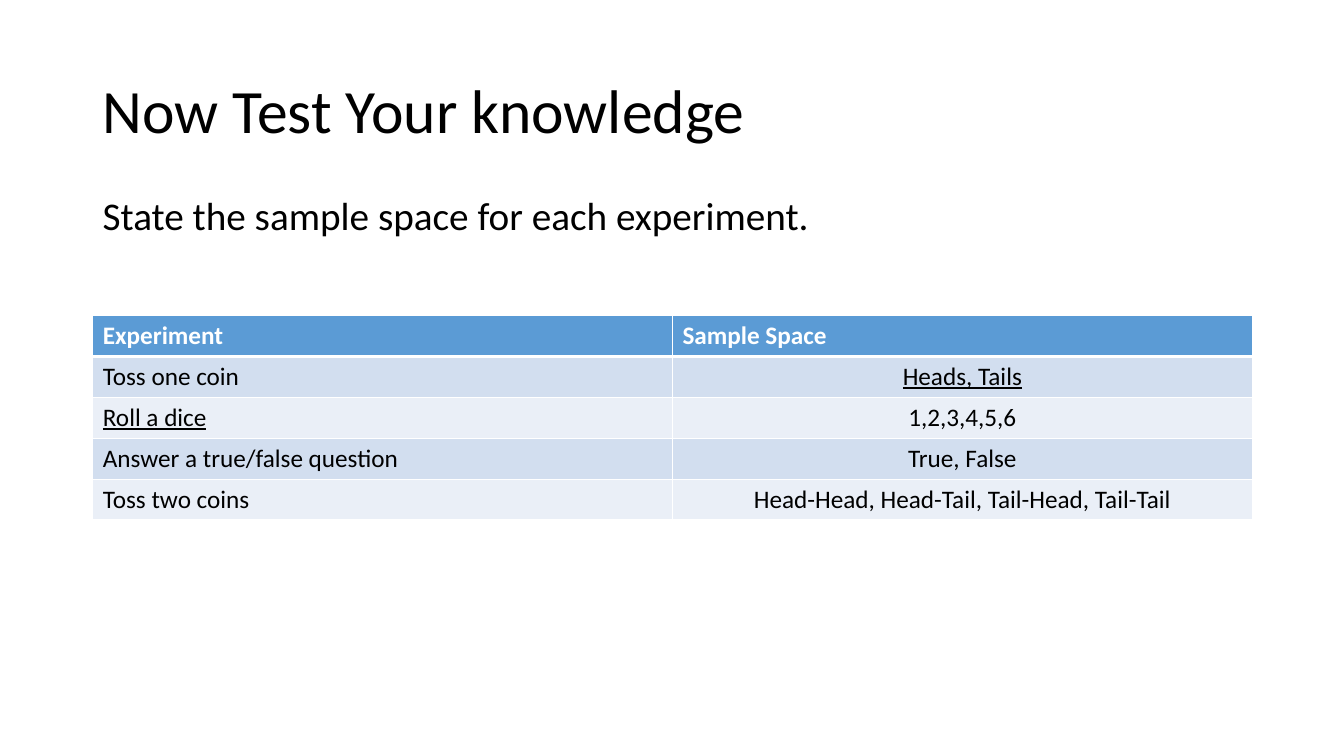
from lxml.etree import SubElement
from pptx import Presentation
from pptx.dml.color import RGBColor
from pptx.enum.text import MSO_ANCHOR as Anchor, PP_ALIGN as Align
from pptx.oxml.ns import qn
from pptx.util import Inches, Pt

WHITE = RGBColor(0xFF, 0xFF, 0xFF)
BLACK = RGBColor(0, 0, 0)
HEADER_BLUE = RGBColor(0x5B, 0x9B, 0xD5)
BANDS = (RGBColor(0xEA, 0xEF, 0xF7), RGBColor(0xD2, 0xDE, 0xEF))

FONT = "Calibri"
SLIDE_W, SLIDE_H = Inches(13.33), Inches(7.5)
MARGIN = Inches(0.92)
CONTENT_W = Inches(11.5)
ROW_H = Inches(0.406)

EXPERIMENTS = [
    ("Experiment", "Sample Space"),
    ("Toss one coin", "Heads, Tails"),
    ("Roll a dice", "1,2,3,4,5,6"),
    ("Answer a true/false question", "True, False"),
    ("Toss two coins", "Head-Head, Head-Tail, Tail-Head, Tail-Tail"),
]
UNDERLINED = {"Heads, Tails", "Roll a dice"}


def add_run(paragraph, text, size, color=BLACK, bold=False, underline=False):
    run = paragraph.add_run()
    run.text = text
    font = run.font
    font.name, font.size, font.bold = FONT, Pt(size), bold
    font.underline = underline
    font.color.rgb = color


def add_text(slide, text, top, height, size, anchor=Anchor.TOP, spacing=1.0):
    frame = slide.shapes.add_textbox(MARGIN, top, CONTENT_W, height).text_frame
    frame.word_wrap = True
    frame.vertical_anchor = anchor
    frame.paragraphs[0].line_spacing = spacing
    add_run(frame.paragraphs[0], text, size)


def set_borders(cell, widths):
    """Draw white cell borders; widths maps a side (L, R, T, B) to points."""
    properties = cell._tc.get_or_add_tcPr()
    for position, (side, width) in enumerate(widths.items()):
        line = properties.makeelement(qn(f"a:ln{side}"), {"w": str(Pt(width))})
        fill = SubElement(line, qn("a:solidFill"))
        SubElement(fill, qn("a:srgbClr"), val=str(WHITE))
        properties.insert(position, line)


def fill_cell(cell, text, row, column):
    header = row == 0
    cell.fill.solid()
    cell.fill.fore_color.rgb = HEADER_BLUE if header else BANDS[row % 2]
    set_borders(cell, {"L": 1, "R": 1,
                       "T": 3 if row == 1 else 1,
                       "B": 3 if header else 1})
    paragraph = cell.text_frame.paragraphs[0]
    paragraph.alignment = Align.CENTER if column and not header else Align.LEFT
    add_run(paragraph, text, 18, WHITE if header else BLACK,
            bold=header, underline=text in UNDERLINED)


def add_experiment_table(slide, top):
    row_count, column_count = len(EXPERIMENTS), len(EXPERIMENTS[0])
    table = slide.shapes.add_table(row_count, column_count, MARGIN, top,
                                   CONTENT_W, ROW_H * row_count).table
    for row, texts in enumerate(EXPERIMENTS):
        for column, text in enumerate(texts):
            fill_cell(table.cell(row, column), text, row, column)


def main():
    deck = Presentation()
    deck.slide_width, deck.slide_height = SLIDE_W, SLIDE_H
    slide = deck.slides.add_slide(deck.slide_layouts[6])

    # Sample spaces
    add_experiment_table(slide, Inches(3.13))

    # Title and instruction
    add_text(slide, "Now Test Your knowledge", Inches(0.4), Inches(1.45), 44,
             Anchor.MIDDLE, 0.9)
    add_text(slide, "State the sample space for each experiment.",
             Inches(1.85), Inches(0.57), 28)

    deck.save("out.pptx")


if __name__ == "__main__":
    main()
